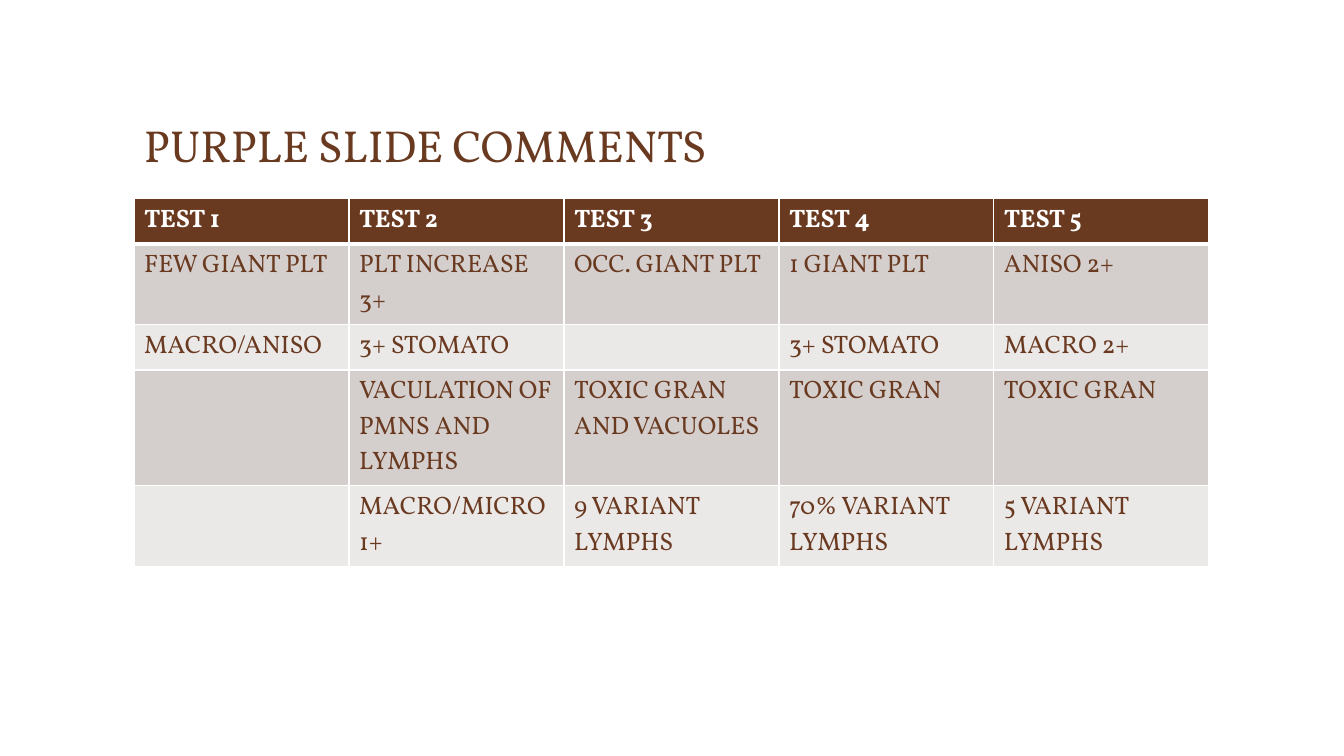
from lxml import etree
from pptx import Presentation
from pptx.dml.color import RGBColor
from pptx.enum.text import MSO_ANCHOR
from pptx.oxml.ns import qn
from pptx.util import Inches, Pt

TITLE = "PURPLE SLIDE COMMENTS"
ROWS = [
    ("TEST 1", "TEST 2", "TEST 3", "TEST 4", "TEST 5"),
    ("FEW GIANT PLT", "PLT INCREASE 3+", "OCC. GIANT PLT", "1 GIANT PLT", "ANISO 2+"),
    ("MACRO/ANISO", "3+ STOMATO", "", "3+ STOMATO", "MACRO 2+"),
    ("", "VACULATION OF PMNS AND LYMPHS", "TOXIC GRAN AND VACUOLES",
     "TOXIC GRAN", "TOXIC GRAN"),
    ("", "MACRO/MICRO 1+", "9 VARIANT LYMPHS", "70% VARIANT LYMPHS",
     "5 VARIANT LYMPHS"),
]
LINES_PER_ROW = (1, 2, 1, 3, 2)

FONT = "Vollkorn"
BROWN = RGBColor(0x6A, 0x3A, 0x20)
WHITE = RGBColor(0xFF, 0xFF, 0xFF)
BANDS = (RGBColor(0xEB, 0xE8, 0xE8), RGBColor(0xD4, 0xCE, 0xCD))

LEFT, WIDTH = Inches(1.33), Inches(10.66)
LINE_HEIGHT, CELL_PADDING = Inches(0.35), Inches(0.1)


def style_text(frame, size, color, bold=False):
    for paragraph in frame.paragraphs:
        for span in paragraph.runs:
            span.font.name = FONT
            span.font.size = Pt(size)
            span.font.bold = bold
            span.font.color.rgb = color


def set_borders(cell, bottom_width):
    """Draw white cell edges; they must come before the fill in the XML."""
    properties = cell._tc.get_or_add_tcPr()
    for side, width in (("L", 1), ("R", 1), ("T", 1), ("B", bottom_width)):
        line = etree.SubElement(properties, qn(f"a:ln{side}"), w=str(Pt(width)))
        fill = etree.SubElement(line, qn("a:solidFill"))
        etree.SubElement(fill, qn("a:srgbClr"), val=str(WHITE))


def add_title(page):
    box = page.shapes.add_textbox(LEFT, Inches(0.48), WIDTH, Inches(1.28))
    frame = box.text_frame
    frame.word_wrap = True
    frame.vertical_anchor = MSO_ANCHOR.BOTTOM
    frame.text = TITLE
    frame.paragraphs[0].line_spacing = 0.9
    style_text(frame, 32, BROWN)


def add_comments_table(page):
    heights = [lines * LINE_HEIGHT + CELL_PADDING for lines in LINES_PER_ROW]
    table = page.shapes.add_table(
        len(ROWS), len(ROWS[0]), LEFT, Inches(1.97), WIDTH, sum(heights)
    ).table
    for row_index, texts in enumerate(ROWS):
        header = row_index == 0
        table.rows[row_index].height = heights[row_index]
        for column_index, text in enumerate(texts):
            cell = table.cell(row_index, column_index)
            set_borders(cell, 3 if header else 1)
            cell.fill.solid()
            cell.fill.fore_color.rgb = BROWN if header else BANDS[row_index % 2]
            cell.text_frame.text = text
            style_text(cell.text_frame, 18, WHITE if header else BROWN, header)


def main():
    deck = Presentation()
    deck.slide_width, deck.slide_height = Inches(13.33), Inches(7.5)
    page = deck.slides.add_slide(deck.slide_layouts[6])
    add_title(page)
    add_comments_table(page)
    deck.save("out.pptx")


if __name__ == "__main__":
    main()
